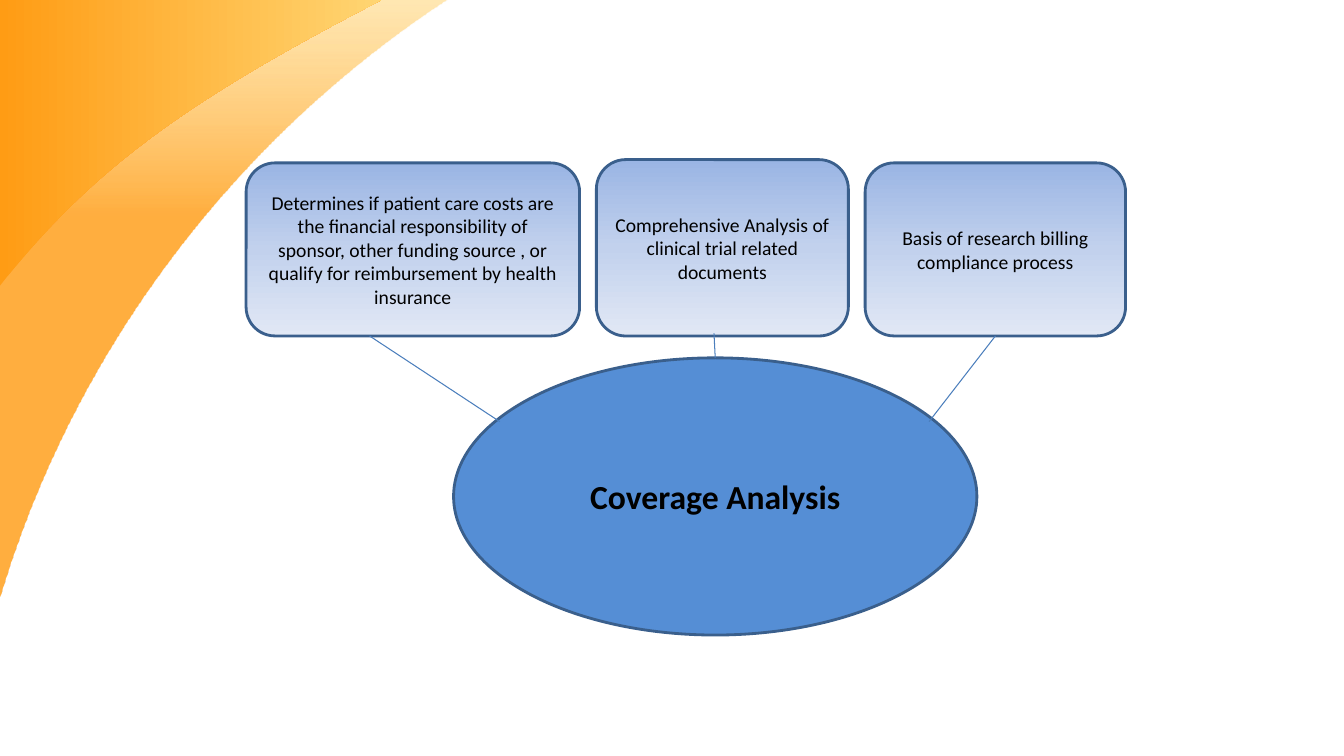
from dataclasses import dataclass
from lxml.etree import SubElement
from pptx import Presentation
from pptx.dml.color import RGBColor
from pptx.enum.shapes import MSO_CONNECTOR, MSO_SHAPE
from pptx.enum.text import MSO_ANCHOR, PP_ALIGN
from pptx.oxml.ns import qn
from pptx.util import Inches, Pt


@dataclass(frozen=True)
class Theme:
    """Colours, type sizes and line widths of the slide."""
    font: str = "Calibri"
    ink: str = "000000"
    outline: str = "3A5F8C"
    link: str = "4B7EBC"
    hub: str = "558ED5"
    card: tuple = ((0, "9AB5E4", 100), (50, "C2D1ED", 100), (100, "E1E8F5", 100))
    lower_sweep: tuple = ((64, "FF9C14", 81), (100, "FFCD5F", 47))
    upper_sweep: tuple = ((0, "FF9C14", 100), (100, "FFD572", 100))
    card_size: int = 14
    hub_size: int = 24
    outline_width: float = 2
    link_width: float = 0.75


class Slide:
    """Draws themed elements on a grid of 16 columns by 9 rows."""

    def __init__(self, deck, theme):
        """Add a blank page and work out the grid unit."""
        self.theme = theme
        self.page = deck.slides.add_slide(deck.slide_layouts[6])
        self.column = deck.slide_width / 16
        self.row = deck.slide_height / 9

    def place(self, x, y):
        """Turn columns and rows into lengths."""
        return round(x * self.column), round(y * self.row)

    def gradient(self, shape, stops, angle):
        """Fill a shape with colour stops along a clockwise angle."""
        shape.fill.gradient()
        shape.fill.gradient_angle = (360 - angle) % 360
        stop_list = shape.element.spPr.find(qn("a:gradFill")).find(qn("a:gsLst"))
        for old_stop in list(stop_list):
            stop_list.remove(old_stop)
        for position, colour, opacity in stops:
            stop = SubElement(stop_list, qn("a:gs"), pos=str(position * 1000))
            tint = SubElement(stop, qn("a:srgbClr"), val=colour)
            if opacity < 100:
                SubElement(tint, qn("a:alpha"), val=str(opacity * 1000))

    def sweep(self, curve, stops, angle):
        """Fill the top left corner up to a cubic curve."""
        steps = 60
        points = []
        for step in range(steps + 1):
            t = step / steps
            weights = ((1 - t) ** 3, 3 * t * (1 - t) ** 2, 3 * t * t * (1 - t), t ** 3)
            points.append(self.place(*(sum(w * v for w, v in zip(weights, axis))
                                       for axis in zip(*curve))))
        builder = self.page.shapes.build_freeform(0, 0)
        builder.add_line_segments(points, close=True)
        shape = builder.convert_to_shape()
        shape.shadow.inherit = False
        shape.line.fill.background()
        self.gradient(shape, stops, angle)

    def bubble(self, kind, left, top, width, height, text, size, bold=False):
        """Add an outlined shape with centred text."""
        box = self.page.shapes.add_shape(kind, *self.place(left, top),
                                         *self.place(width, height))
        box.shadow.inherit = False
        box.line.color.rgb = RGBColor.from_string(self.theme.outline)
        box.line.width = Pt(self.theme.outline_width)
        box.text_frame.word_wrap = True
        box.text_frame.vertical_anchor = MSO_ANCHOR.MIDDLE
        para = box.text_frame.paragraphs[0]
        para.alignment = PP_ALIGN.CENTER
        span = para.add_run()
        span.text = text
        span.font.name = self.theme.font
        span.font.size = Pt(size)
        span.font.bold = bold
        span.font.color.rgb = RGBColor.from_string(self.theme.ink)
        return box

    def card(self, left, top, width, height, text):
        """Add a rounded card with a soft gradient."""
        box = self.bubble(MSO_SHAPE.ROUNDED_RECTANGLE, left, top, width, height,
                          text, self.theme.card_size)
        self.gradient(box, self.theme.card, 90)
        return box

    def hub(self, left, top, width, height, text):
        """Add the central ellipse."""
        box = self.bubble(MSO_SHAPE.OVAL, left, top, width, height,
                          text, self.theme.hub_size, bold=True)
        box.fill.solid()
        box.fill.fore_color.rgb = RGBColor.from_string(self.theme.hub)
        return box

    def link(self, start, end):
        """Add a thin straight connector."""
        line = self.page.shapes.add_connector(
            MSO_CONNECTOR.STRAIGHT, *self.place(*start), *self.place(*end))
        line.line.color.rgb = RGBColor.from_string(self.theme.link)
        line.line.width = Pt(self.theme.link_width)
        SubElement(line.element.spPr, qn("a:effectLst"))
        return line


def main():
    """Build the coverage analysis slide."""
    deck = Presentation()
    deck.slide_width, deck.slide_height = Inches(13.33), Inches(7.5)
    theme = Theme()
    slide = Slide(deck, theme)

    slide.sweep(((5.33, 0), (2.68, 1.73), (0.83, 4.31), (0, 7.1)), theme.lower_sweep, 270)
    slide.sweep(((4.54, 0), (2.2, 1.21), (1.08, 2.03), (0, 3.4)), theme.upper_sweep, 0)

    slide.card(2.93, 1.94, 3.97, 2.06,
               "Determines if patient care costs are the financial responsibility of sponsor, "
               "other funding source , or qualify for reimbursement by health insurance")
    slide.card(7.1, 1.9, 3, 2.1, "Comprehensive Analysis of clinical trial related documents")
    billing = slide.card(10.3, 1.94, 3.1, 2.06, "Basis of research billing compliance process")
    coverage = slide.hub(5.4, 4.26, 6.23, 3.3, "Coverage Analysis")

    slide.link((8.5, 3.97), (8.51, 4.26)).end_connect(coverage, 0)
    slide.link((11.85, 4), (11.06, 5.02)).begin_connect(billing, 2)
    slide.link((4.4, 4), (5.95, 5.02))
    deck.save("out.pptx")


if __name__ == "__main__":
    main()
